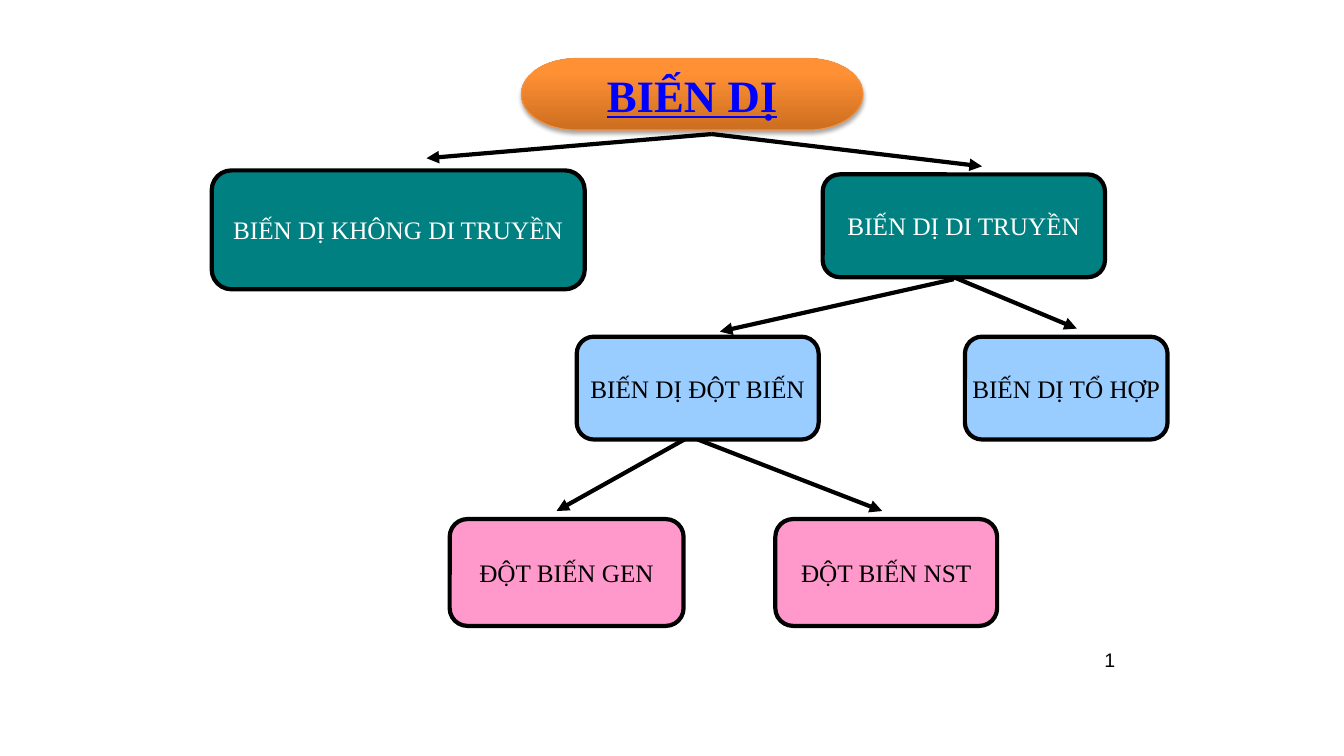
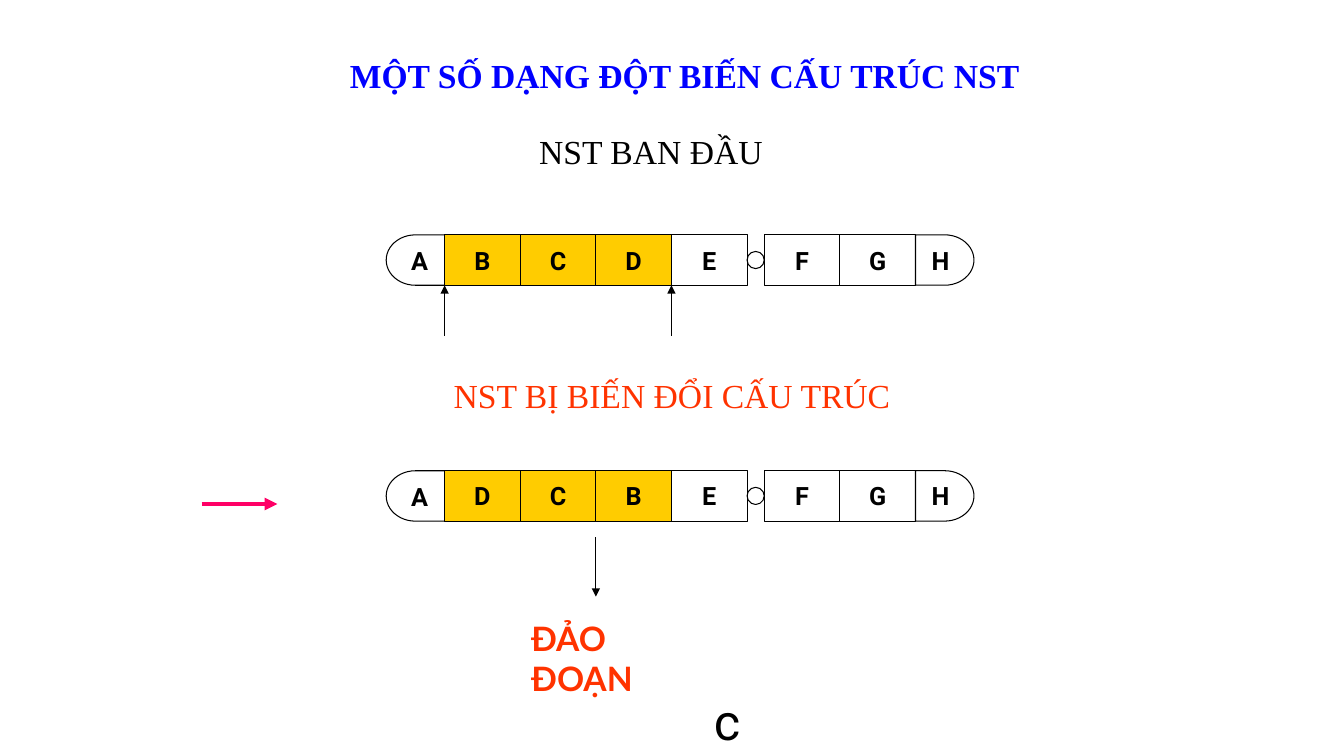
from dataclasses import dataclass

from lxml import etree
from pptx import Presentation
from pptx import util as u
from pptx.dml.color import RGBColor
from pptx.enum import shapes, text
from pptx.oxml.ns import qn


@dataclass(frozen=True)
class Theme:
    black: str = "000000"
    white: str = "FFFFFF"
    blue: str = "0000FF"
    red: str = "FF3300"
    pink: str = "FF0066"
    teal: str = "008080"
    sky: str = "99CCFF"
    rose: str = "FF99CC"
    yellow: str = "FFCC00"
    orange: str = "FF9034"
    orange_dark: str = "CC6E20"
    orange_edge: str = "F69240"
    serif: str = "Times New Roman"
    label: str = "Roboto"
    note: str = "Lato"
    number: str = "Arial"
    root_size: int = 32
    title_size: int = 24
    body_size: int = 18
    number_size: int = 14
    letter_size: int = 36
    thin: float = 0.75
    thick: float = 3


THEME = Theme()
KIND = shapes.MSO_SHAPE
CENTER, LEFT, RIGHT = text.PP_ALIGN.CENTER, text.PP_ALIGN.LEFT, text.PP_ALIGN.RIGHT


def rgb(color):
    return RGBColor.from_string(color)


def inches(*lengths):
    return [u.Inches(length) for length in lengths]


# Shared parts
def write(shape, words, size, font, color, bold=False, align=CENTER, wrap=False, middle=True):
    frame = shape.text_frame
    frame.word_wrap = wrap
    frame.vertical_anchor = text.MSO_ANCHOR.MIDDLE if middle else text.MSO_ANCHOR.TOP
    paragraph = frame.paragraphs[0]
    paragraph.text = words
    paragraph.alignment = align
    paragraph.font.size = u.Pt(size)
    paragraph.font.name = font
    paragraph.font.bold = bold
    paragraph.font.color.rgb = rgb(color)
    return paragraph


def add_label(slide, box, words, size, font, color, **style):
    shape = slide.shapes.add_textbox(*inches(*box))
    write(shape, words, size, font, color, **{"middle": False, **style})


def add_block(slide, kind, box, fill=None, line=THEME.black, width=THEME.thin):
    shape = slide.shapes.add_shape(kind, *inches(*box))
    shape.shadow.inherit = False
    if fill:
        shape.fill.solid()
        shape.fill.fore_color.rgb = rgb(fill)
    else:
        shape.fill.background()
    shape.line.color.rgb = rgb(line)
    shape.line.width = u.Pt(width)
    return shape


def add_arrow(slide, start, end, color=THEME.black, width=THEME.thin):
    arrow = slide.shapes.add_connector(shapes.MSO_CONNECTOR.STRAIGHT, *inches(*start, *end))
    arrow.line.color.rgb = rgb(color)
    arrow.line.width = u.Pt(width)
    etree.SubElement(arrow.line._get_or_add_ln(), qn("a:tailEnd"), type="triangle")
    etree.SubElement(arrow.element.spPr, qn("a:effectLst"))
    return arrow


# Variation tree
def add_root(slide, box, words):
    root = add_block(slide, KIND.FLOWCHART_TERMINATOR, box, line=THEME.orange_edge)
    root.fill.gradient()
    root.fill.gradient_angle = 90
    stops = ((0, THEME.orange_dark), (0.8, THEME.orange))
    for stop, (position, color) in zip(root.fill.gradient_stops, stops):
        stop.position = position
        stop.color.rgb = rgb(color)
    shadow = etree.SubElement(
        root.element.spPr.find(qn("a:effectLst")), qn("a:outerShdw"),
        blurRad=str(u.Pt(3.1)), dist=str(u.Pt(1.8)), dir="5400000", rotWithShape="0")
    shade = etree.SubElement(shadow, qn("a:srgbClr"), val=THEME.black)
    etree.SubElement(shade, qn("a:alpha"), val="35000")
    paragraph = write(root, words, THEME.root_size, THEME.serif, THEME.blue, bold=True)
    paragraph.font.underline = True


def add_tree(slide, left, top):
    def place(x, y):
        return left + x, top + y

    # Branches lie behind the nodes
    branches = (
        ((4.96, 0.75), (2.13, 0.99)),
        ((4.96, 0.75), (7.64, 1.07)),
        ((7.36, 2.19), (5.04, 2.71)),
        ((7.36, 2.17), (8.58, 2.68)),
        ((4.76, 3.74), (3.42, 4.49)),
        ((4.8, 3.78), (6.65, 4.49)),
    )
    arrows = [add_arrow(slide, place(*start), place(*end), width=THEME.thick)
              for start, end in branches]

    add_root(slide, (*place(3.07, 0), 3.39, 0.71), "BIẾN DỊ")

    nodes = (
        ("BIẾN DỊ KHÔNG DI TRUYỀN", 0, 1.11, 3.7, 1.18, THEME.teal, THEME.white),
        ("BIẾN DỊ DI TRUYỀN", 6.06, 1.15, 2.8, 1.02, THEME.teal, THEME.white),
        ("BIẾN DỊ ĐỘT BIẾN", 3.62, 2.76, 2.4, 1.02, THEME.sky, THEME.black),
        ("BIẾN DỊ TỔ HỢP", 7.47, 2.76, 2.01, 1.02, THEME.sky, THEME.black),
        ("ĐỘT BIẾN GEN", 2.36, 4.57, 2.32, 1.06, THEME.rose, THEME.black),
        ("ĐỘT BIẾN NST", 5.59, 4.57, 2.2, 1.06, THEME.rose, THEME.black),
    )
    placed = {}
    for words, x, y, width, height, fill, color in nodes:
        node = add_block(slide, KIND.FLOWCHART_ALTERNATE_PROCESS,
                         (*place(x, y), width, height), fill, width=THEME.thick)
        write(node, words, THEME.body_size, THEME.serif, color)
        placed[words] = node
    arrows[-1].begin_connect(placed["BIẾN DỊ ĐỘT BIẾN"], 2)


# Chromosome: round caps, square genes and a centromere at the dash
def add_chromosome(slide, left, top, genes):
    cap, cell, joint, height = 0.58, 0.75, 0.17, 0.5
    edges = {}
    x = left
    for index, gene in enumerate(genes):
        edges[gene] = x
        if gene == "-":
            add_block(slide, KIND.OVAL, (x, top + (height - joint) / 2, joint, joint))
            x += joint
            continue
        first, last = index == 0, index == len(genes) - 1
        kind = KIND.FLOWCHART_DELAY if first or last else KIND.FLOWCHART_PROCESS
        width = cap if first or last else cell
        fill = THEME.yellow if gene in "BCD" else None
        segment = add_block(slide, kind, (x, top, width, height), fill)
        write(segment, gene, THEME.body_size, THEME.label, THEME.black, bold=True)
        if first:
            segment.rotation = 180
            segment.element.txBody.bodyPr.set("rot", "10800000")
        x += width
    return edges, top + height


def add_inversion(slide, left, top):
    # Headings
    headings = (
        ((3.33, 0.5, 6.92, 1.3), "MỘT SỐ DẠNG ĐỘT BIẾN CẤU TRÚC NST", THEME.blue,
         {"bold": True, "wrap": True}),
        ((5.25, 1.25, 2.43, 0.5), "NST BAN ĐẦU", THEME.black, {"align": LEFT}),
        ((4.08, 3.67, 5.17, 1.11), "NST BỊ BIẾN ĐỔI CẤU TRÚC", THEME.red, {"wrap": True}),
    )
    for (x, y, width, height), words, color, style in headings:
        add_label(slide, (left + x, top + y, width, height), words,
                  THEME.title_size, THEME.serif, color, **style)

    # Before: arrows mark the two break points
    edges, bottom = add_chromosome(slide, left + 3.83, top + 2.33, "ABCDE-FGH")
    for gene in "BE":
        add_arrow(slide, (edges[gene], bottom + 0.5), (edges[gene], bottom))

    # After: the middle genes are reversed
    edges, bottom = add_chromosome(slide, left + 3.83, top + 4.67, "ADCBE-FGH")
    add_arrow(slide, (left + 2, top + 5), (left + 2.75, top + 5), THEME.pink, THEME.thick)
    add_arrow(slide, (edges["B"], bottom + 0.16), (edges["B"], bottom + 0.75))

    # Result
    add_label(slide, (left + 5.17, top + 6.08, 1.5, 0.9), "ĐẢO ĐOẠN", THEME.title_size,
              THEME.note, THEME.red, bold=True, align=LEFT, wrap=True)
    add_label(slide, (left + 6.75, top + 6.8, 0.92, 0.7), "c", THEME.letter_size,
              THEME.label, THEME.black, wrap=True)


def main():
    presentation = Presentation()
    presentation.slide_width, presentation.slide_height = inches(13.33, 7.5)
    blank = presentation.slide_layouts[6]

    tree_slide = presentation.slides.add_slide(blank)
    add_label(tree_slide, (8.83, 6.34, 2.33, 0.4), "1", THEME.number_size, THEME.number,
              THEME.black, align=RIGHT, wrap=True, middle=True)
    add_tree(tree_slide, 2.1, 0.58)

    add_inversion(presentation.slides.add_slide(blank), 0, 0)
    presentation.save("out.pptx")


if __name__ == "__main__":
    main()
